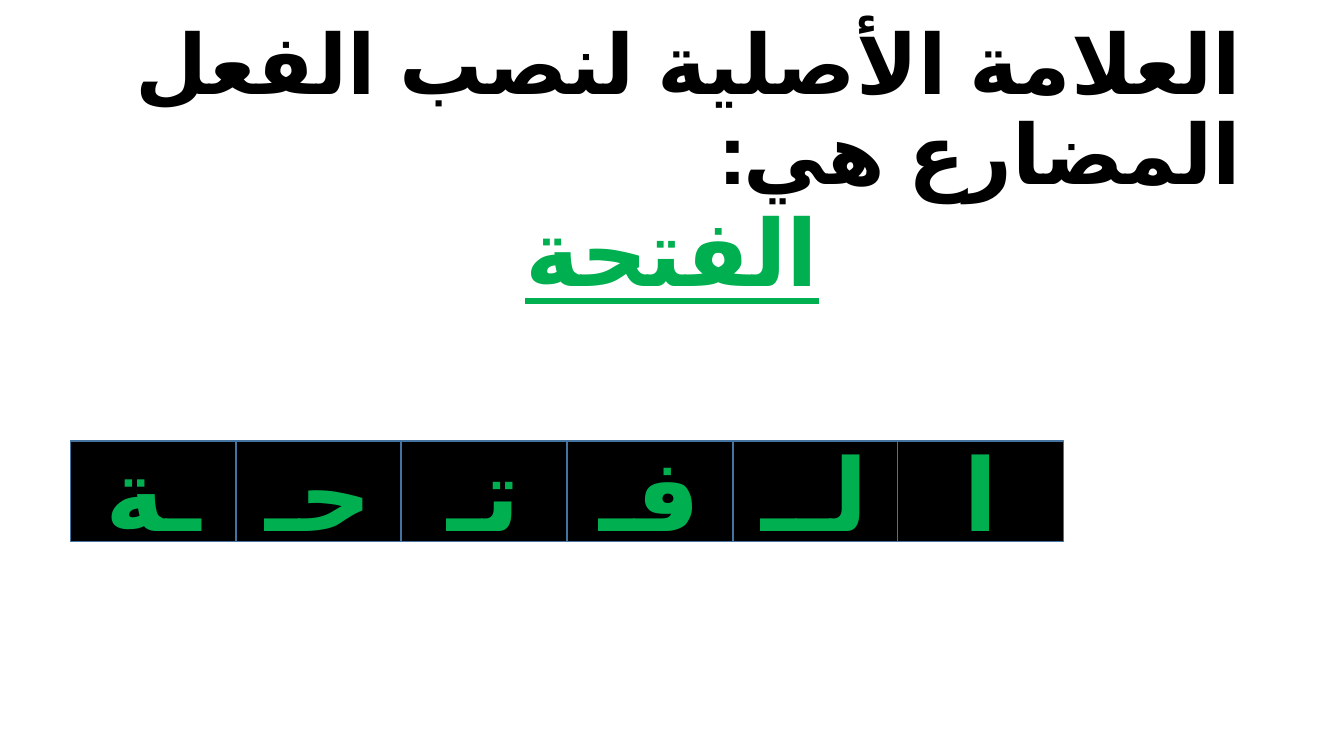
from pptx import Presentation
from pptx.dml.color import RGBColor
from pptx.enum.lang import MSO_LANGUAGE_ID
from pptx.enum.shapes import MSO_SHAPE
from pptx.enum.text import MSO_ANCHOR, PP_ALIGN
from pptx.util import Pt

EMU_PER_PX = 9525
FONT = "Calibri"
COLORS = {"title": "000000", "answer": "00B050", "tile": "000000", "border": "43739E"}
LETTERS = ["ـة", "حـ", "تـ", "فـ", "لــ", "ا"]  # left to right
ROW_LEFT, ROW_RIGHT, ROW_TOP, TILE_HEIGHT = 67, 1013, 420, 96


def px(n):
    return n * EMU_PER_PX


def rgb(name):
    return RGBColor.from_string(COLORS[name])


def set_arabic_text(sp, text, size, color, align=PP_ALIGN.CENTER, underline=None):
    """Write one bold right-to-left paragraph and return it."""
    tf = sp.text_frame
    tf.word_wrap = True
    p = tf.paragraphs[0]
    p.text = text
    p.alignment = align
    p._p.get_or_add_pPr().set("rtl", "1")
    r = p.runs[0]
    r.font.name = FONT
    r.font.language_id = MSO_LANGUAGE_ID.ARABIC
    r.font.size = Pt(size)
    r.font.bold = True
    r.font.underline = underline
    r.font.color.rgb = rgb(color)
    return p


def add_text(s, box, anchor, text, size, color, align=PP_ALIGN.CENTER, underline=None):
    sp = s.shapes.add_textbox(*map(px, box))
    sp.text_frame.vertical_anchor = anchor
    p = set_arabic_text(sp, text, size, color, align, underline)
    p.line_spacing = 0.9
    return p


def add_tile(s, left, right, letter):
    sp = s.shapes.add_shape(MSO_SHAPE.RECTANGLE, px(left), px(ROW_TOP),
                            px(right - left), px(TILE_HEIGHT))
    sp.shadow.inherit = False
    sp.fill.solid()
    sp.fill.fore_color.rgb = rgb("tile")
    sp.line.color.rgb = rgb("border")
    sp.line.width = Pt(1)
    sp.text_frame.vertical_anchor = MSO_ANCHOR.MIDDLE
    set_arabic_text(sp, letter, 72, "answer")


def add_letter_row(s):
    edges = [ROW_LEFT + round(i * (ROW_RIGHT - ROW_LEFT) / len(LETTERS))
             for i in range(len(LETTERS) + 1)]
    for left, right, letter in zip(edges, edges[1:], LETTERS):
        add_tile(s, left, right, letter)


def main():
    prs = Presentation()
    prs.slide_width, prs.slide_height = px(1280), px(720)
    s = prs.slides.add_slide(prs.slide_layouts[6])
    add_text(s, (88, 38, 1104, 139), MSO_ANCHOR.MIDDLE,
             "العلامة الأصلية لنصب الفعل المضارع هي:", 59.4, "title", PP_ALIGN.RIGHT)
    answer = add_text(s, (88, 192, 1104, 457), MSO_ANCHOR.TOP,
                      "الفتحة", 66, "answer", underline=True)
    answer.space_before = Pt(10)
    add_letter_row(s)
    prs.save("out.pptx")


if __name__ == "__main__":
    main()
